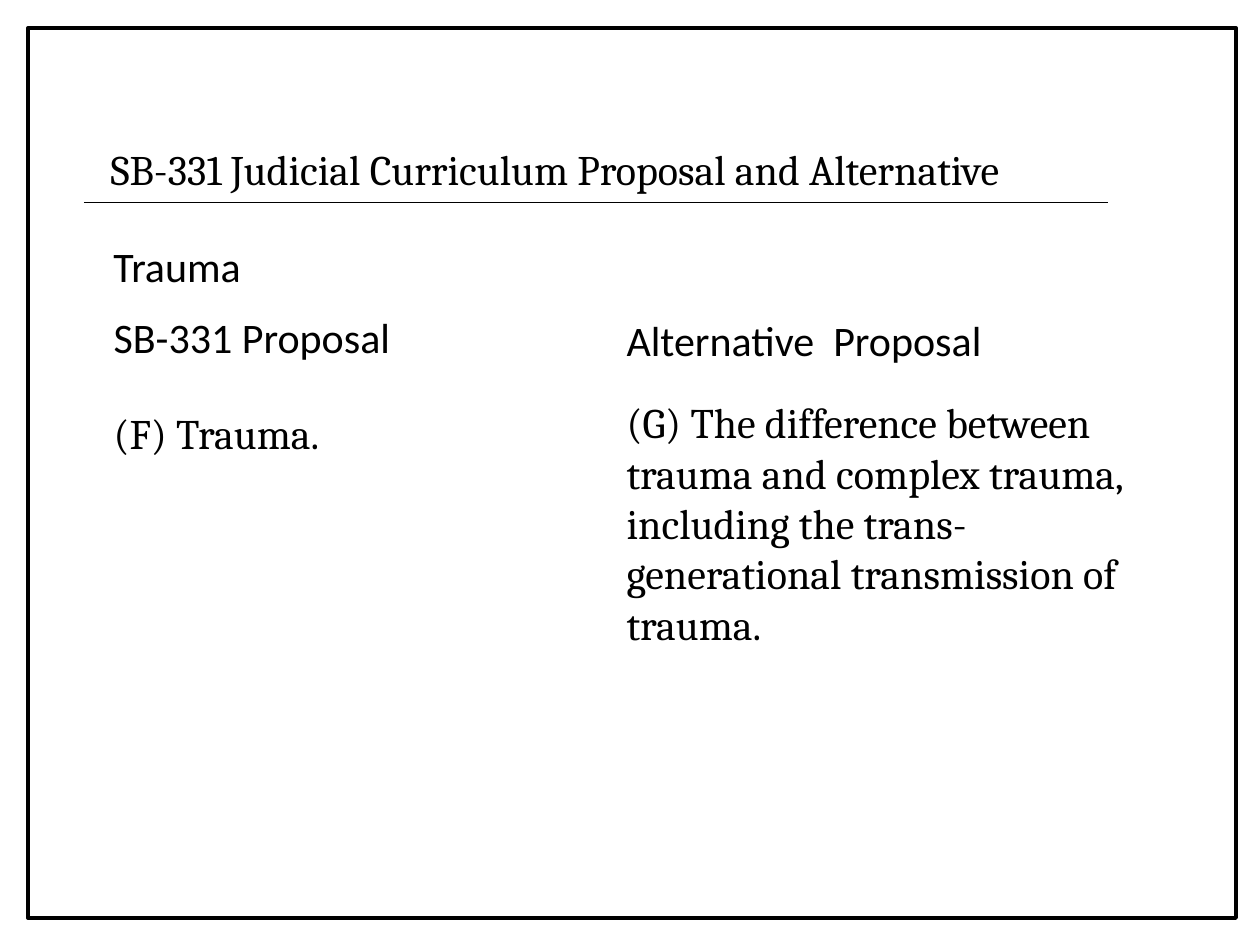
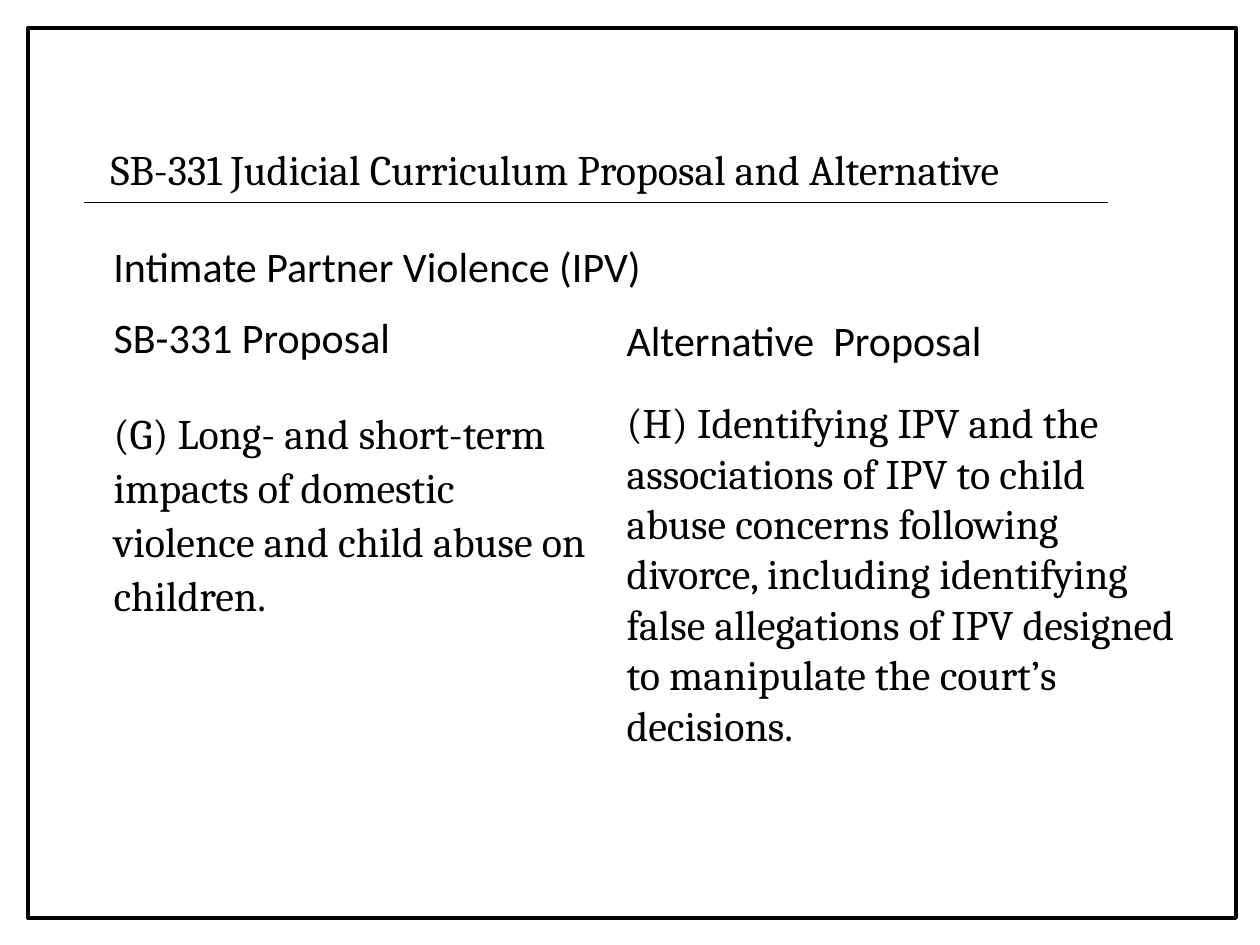
from pptx import Presentation
from pptx.dml.color import RGBColor
from pptx.enum.shapes import MSO_CONNECTOR, MSO_SHAPE
from pptx.enum.text import MSO_ANCHOR, MSO_AUTO_SIZE, PP_ALIGN
from pptx.oxml.ns import qn
from pptx.util import Pt
from lxml import etree

RECT = MSO_SHAPE.RECTANGLE
LINE = MSO_CONNECTOR.STRAIGHT
TOP = MSO_ANCHOR.TOP
GROW = MSO_AUTO_SIZE.SHAPE_TO_FIT_TEXT
LEFT = PP_ALIGN.LEFT

TITLE = "SB-331 Judicial Curriculum Proposal and Alternative"
HEADS = ("SB-331 Proposal", "Alternative  Proposal")
PAGES = [
    {"topic": "Trauma",
     "texts": ("(F) Trauma.",
               "(G) The difference between trauma and complex trauma, "
               "including the trans-generational transmission of trauma."),
     "rows": (1, 5)},
    {"topic": "Intimate Partner Violence (IPV)",
     "texts": ("(G) Long- and short-term impacts of domestic violence "
               "and child abuse on children.",
               "(H) Identifying IPV and the associations of IPV to child "
               "abuse concerns following divorce, including identifying "
               "false allegations of IPV designed to manipulate the "
               "court’s decisions."),
     "rows": (4, 7)},
]

COLORS = {"ink": "000000", "paper": "FFFFFF"}
SANS, SERIF = "Calibri", "Cambria"
SIZE = 24
SCALE = 914400 / 126

TITLE_BOX = (98, 134, 1032, 64)
TOPIC_BOX = (101, 234, 609, 63)
FRAME_BOX = (28, 28, 1208, 890)
RULE = (84, 202, 1108, 202)
COL_TOP, HEAD_ROOM = 305, 104
COLS = [
    {"left": 101, "width": 513, "pitch": 54,
     "head": {"after": 18},
     "body": {"before": 6, "after": 18, "lead": 1.07}},
    {"left": 614, "width": 580, "pitch": 50,
     "head": {"before": 18, "lead": 1.07},
     "body": {"before": 18}},
]


def emu(*nums):
    return [round(n * SCALE) for n in nums]


def color(name):
    return RGBColor.from_string(COLORS[name])


def place(shape, box):
    shape.left, shape.top, shape.width, shape.height = emu(*box)
    frame = shape.text_frame
    frame.word_wrap = True
    frame.auto_size = GROW
    frame.vertical_anchor = TOP
    return frame


def write(para, text, font=SANS, before=0, after=0, lead=1.0):
    para.alignment = LEFT
    para.space_before, para.space_after = Pt(before), Pt(after)
    para.line_spacing = lead
    props = para._p.get_or_add_pPr()
    props.set("marL", "0")
    props.set("indent", "0")
    etree.SubElement(props, qn("a:buNone"))
    run = para.add_run()
    run.text = text
    run.font.name, run.font.size = font, Pt(SIZE)
    run.font.color.rgb = color("ink")


def add_frame(slide):
    rule = slide.shapes.add_connector(LINE, *emu(*RULE))
    rule.line.color.rgb, rule.line.width = color("ink"), Pt(0.5)
    etree.SubElement(rule._element.spPr, qn("a:effectLst"))
    edge = slide.shapes.add_shape(RECT, *emu(*FRAME_BOX))
    edge.shadow.inherit = False
    edge.fill.background()
    edge.line.color.rgb, edge.line.width = color("ink"), Pt(2.25)


def add_page(deck, page):
    slide = deck.slides.add_slide(deck.slide_layouts.get_by_name("Two Content"))
    title = place(slide.shapes.title, TITLE_BOX)
    write(title.paragraphs[0], TITLE, SERIF, before=6, after=6, lead=1.07)
    parts = zip(COLS, HEADS, page["texts"], page["rows"])
    for i, (col, head, text, rows) in enumerate(parts, 1):
        high = HEAD_ROOM + rows * col["pitch"]
        box = (col["left"], COL_TOP, col["width"], high)
        body = place(slide.placeholders[i], box)
        write(body.paragraphs[0], head, **col["head"])
        write(body.add_paragraph(), text, SERIF, **col["body"])
    topic = place(slide.shapes.add_textbox(*emu(*TOPIC_BOX)), TOPIC_BOX)
    write(topic.paragraphs[0], page["topic"])
    add_frame(slide)


def main():
    deck = Presentation()
    deck.slide_width, deck.slide_height = emu(1260, 945)
    fill = deck.slide_master.background.fill
    fill.solid()
    fill.fore_color.rgb = color("paper")
    for page in PAGES:
        add_page(deck, page)
    deck.save("out.pptx")


if __name__ == "__main__":
    main()
